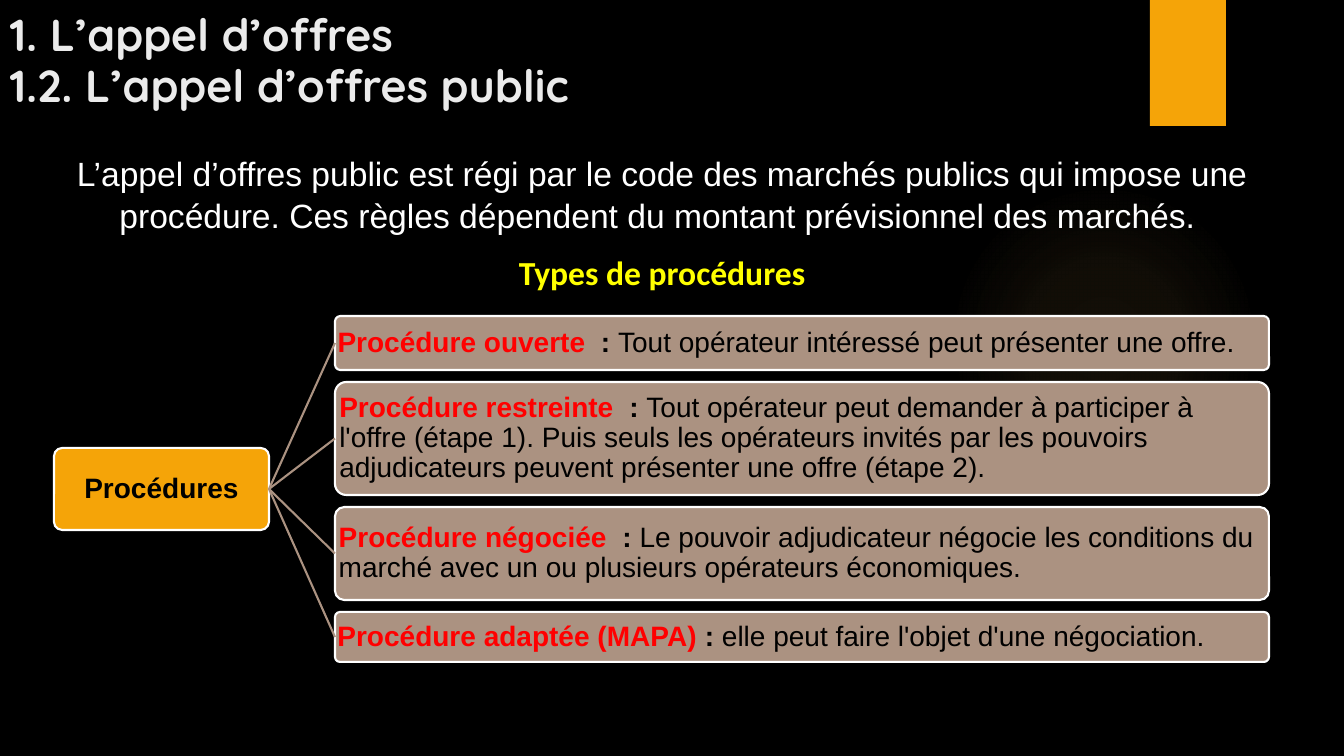
from lxml import etree
from pptx import Presentation
from pptx.dml.color import RGBColor
from pptx.enum.shapes import MSO_CONNECTOR, MSO_SHAPE
from pptx.enum.text import MSO_ANCHOR, PP_ALIGN
from pptx.oxml import parse_xml
from pptx.oxml.ns import qn
from pptx.util import Emu, Pt

RECT, OVAL, ROUNDED = MSO_SHAPE.RECTANGLE, MSO_SHAPE.OVAL, MSO_SHAPE.ROUNDED_RECTANGLE
STRAIGHT = MSO_CONNECTOR.STRAIGHT
MIDDLE, BOTTOM = MSO_ANCHOR.MIDDLE, MSO_ANCHOR.BOTTOM
LEFT, CENTER = PP_ALIGN.LEFT, PP_ALIGN.CENTER
RIGHT_SIDE, LEFT_SIDE = 3, 1

SLIDE_W, SLIDE_H = 1344, 756
EMU_PER_PX = 12192000 / SLIDE_W

BLACK, WHITE, RED, YELLOW = "000000", "FFFFFF", "FF0000", "FFFF00"
ORANGE, TAUPE, GLOW, TITLE_GREY = "F5A408", "AB9281", "FAC96A", "EBEBEB"

TITLE_FONT = {"name": "Quicksand", "size": Pt(32), "bold": True}
INTRO_FONT = {"name": "Arial", "size": Pt(24)}
HEADING_FONT = {"name": "Calibri", "size": Pt(24), "bold": True}
STRONG_FONT = {"name": "Arial", "size": Pt(20), "bold": True}
PLAIN_FONT = {"name": "Arial", "size": Pt(20), "bold": False}

# term, separator, explanation, height
PROCEDURES = [
    ("Procédure ouverte ", " : ",
     "Tout opérateur intéressé peut présenter une offre.", 54),
    ("Procédure restreinte ", " : ",
     "Tout opérateur peut demander à participer à l'offre (étape 1). Puis seuls les "
     "opérateurs invités par les pouvoirs adjudicateurs peuvent présenter une offre "
     "(étape 2).", 113),
    ("Procédure négociée ", " : ",
     "Le pouvoir adjudicateur négocie les conditions du marché avec un ou plusieurs "
     "opérateurs économiques.", 93),
    ("Procédure adaptée (MAPA) ", ": ",
     "elle peut faire l'objet d'une négociation.", 50),
]


def px(length):
    return Emu(round(length * EMU_PER_PX))


def color(hex_string):
    return RGBColor.from_string(hex_string)


def set_attributes(target, values):
    for name, value in values.items():
        setattr(target, name, value)


def add_run(paragraph, text, font, hex_string):
    run = paragraph.add_run()
    run.text = text
    set_attributes(run.font, font)
    run.font.color.rgb = color(hex_string)


def add_text_box(slide, box, anchor=None):
    frame = slide.shapes.add_textbox(*map(px, box)).text_frame
    frame.word_wrap = True
    if anchor is not None:
        frame.vertical_anchor = anchor
    return frame


def add_filled_shape(slide, kind, box, fill):
    shape = slide.shapes.add_shape(kind, *map(px, box))
    shape.shadow.inherit = False
    shape.fill.solid()
    shape.fill.fore_color.rgb = color(fill)
    shape.line.fill.background()
    return shape


def add_glow(slide, box):
    """Place a faint radial gradient that fades out towards its rim."""
    glow = add_filled_shape(slide, OVAL, box, GLOW)
    stops = "".join(
        f'<a:gs pos="{position}"><a:srgbClr val="{GLOW}"><a:alpha val="{alpha}"/>'
        "</a:srgbClr></a:gs>"
        for position, alpha in [(0, 7000), (36000, 6000), (69000, 0), (100000, 0)])
    gradient = parse_xml(
        '<a:gradFill xmlns:a="http://schemas.openxmlformats.org/drawingml/2006/main">'
        f'<a:gsLst>{stops}</a:gsLst><a:path path="circle">'
        '<a:fillToRect l="50000" t="50000" r="50000" b="50000"/></a:path></a:gradFill>')
    properties = glow.element.spPr
    properties.replace(properties.find(qn("a:solidFill")), gradient)


def add_title(slide, box):
    paragraph = add_text_box(slide, box, BOTTOM).paragraphs[0]
    paragraph.line_spacing = 0.96
    add_run(paragraph, "1. L’appel d’offres", TITLE_FONT, TITLE_GREY)
    paragraph.add_line_break()
    add_run(paragraph, "1.2. L’appel d’offres public", TITLE_FONT, TITLE_GREY)


def add_introduction(slide, box):
    frame = add_text_box(slide, box)
    intro, heading = frame.paragraphs[0], frame.add_paragraph()
    set_attributes(intro, {"alignment": CENTER, "line_spacing": 1.04})
    add_run(intro, "L’appel d’offres public est régi par le code des marchés publics qui "
            "impose une procédure. Ces règles dépendent du montant prévisionnel des "
            "marchés. ", INTRO_FONT, WHITE)
    set_attributes(heading, {"alignment": CENTER, "space_before": Pt(12)})
    add_run(heading, "Types de procédures", HEADING_FONT, YELLOW)


def add_node(slide, box, fill, alignment, runs):
    node = add_filled_shape(slide, ROUNDED, box, fill)
    node.adjustments[0] = 0.1
    node.line.color.rgb = color(WHITE)
    node.line.width = Pt(1.5)
    frame = node.text_frame
    margins = dict.fromkeys(
        ["margin_left", "margin_top", "margin_right", "margin_bottom"], px(1))
    set_attributes(frame, {"word_wrap": True, "vertical_anchor": MIDDLE, **margins})
    paragraph = frame.paragraphs[0]
    set_attributes(paragraph, {"alignment": alignment, "line_spacing": 0.9})
    for run in runs:
        add_run(paragraph, *run)
    return node


def add_branch(slide, root, leaf):
    branch = slide.shapes.add_connector(STRAIGHT, 0, 0, 0, 0)
    branch.begin_connect(root, RIGHT_SIDE)
    branch.end_connect(leaf, LEFT_SIDE)
    branch.line.color.rgb = color(TAUPE)
    branch.line.width = Pt(1.5)
    etree.SubElement(branch.element.spPr, qn("a:effectLst"))


def add_procedure_tree(slide, box):
    left, top, width, height = box
    root_w, root_h, leaf_left, gap = 215, 82, 281, 12
    root_box = (left, top + (height - root_h) // 2, root_w, root_h)
    root = add_node(slide, root_box, ORANGE, CENTER,
                    [("Procédures", STRONG_FONT, BLACK)])
    leaf_top = top
    for term, separator, explanation, leaf_h in PROCEDURES:
        leaf_box = (left + leaf_left, leaf_top, width - leaf_left, leaf_h)
        leaf = add_node(slide, leaf_box, TAUPE, LEFT,
                        [(term, STRONG_FONT, RED), (separator, STRONG_FONT, BLACK),
                         (explanation, PLAIN_FONT, BLACK)])
        add_branch(slide, root, leaf)
        leaf_top += leaf_h + gap


def main():
    presentation = Presentation()
    presentation.slide_width, presentation.slide_height = px(SLIDE_W), px(SLIDE_H)
    slide = presentation.slides.add_slide(presentation.slide_layouts[6])
    slide.background.fill.solid()
    slide.background.fill.fore_color.rgb = color(BLACK)
    add_glow(slide, (949, 184, 310, 310))
    add_filled_shape(slide, RECT, (1150, 0, 76, 126), ORANGE)
    add_title(slide, (0, 0, 1206, 118))
    add_introduction(slide, (40, 146, 1244, 149))
    add_procedure_tree(slide, (54, 316, 1215, 346))
    presentation.save("out.pptx")


if __name__ == "__main__":
    main()
